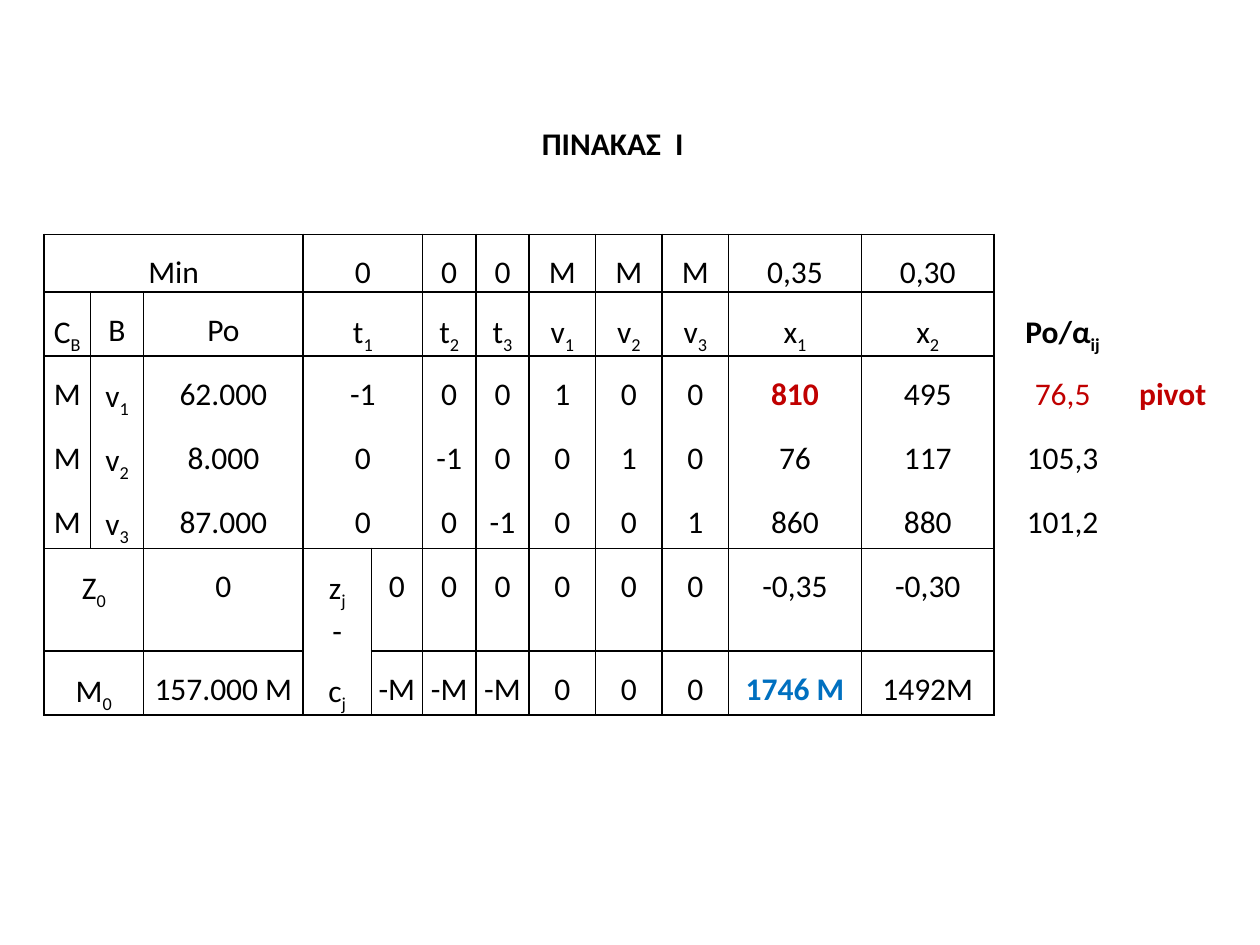
from typing import NamedTuple

from pptx import Presentation
from pptx.dml.color import RGBColor
from pptx.enum import text as t
from pptx.oxml import ns, xmlchemy as xc
from pptx.util import Pt

BLACK, RED, BLUE = "000000", "C00000", "0070C0"
GRID = 12  # columns inside the ruled part; the rest hold the ratios


class Row(NamedTuple):
    high: float
    text: str  # "|" parts cells, "<" joins the cell to its left, "_" lowers
    top: bool = True
    base: bool = True


class Style(NamedTuple):
    color: str = BLACK
    bold: bool = False


WIDTHS = [26.5, 30.4, 91.2, 38.9, 29.3, 30.5, 30.5, 38, 38, 38, 75.9, 75.9, 78.3, 47.5]
ROWS = [
    Row(16.5, "Min|<|<|0|<|0|0|M|M|M|0,35|0,30||"),
    Row(16.5, "C_B|B|Po|t_1|<|t_2|t_3|v_1|v_2|v_3|x_1|x_2|Po/α_ij|"),
    Row(16.5, "M|v_1|62.000|-1|<|0|0|1|0|0|810|495|76,5|pivot", base=False),
    Row(16.5, "M|v_2|8.000|0|<|-1|0|0|1|0|76|117|105,3|", top=False, base=False),
    Row(16.5, "M|v_3|87.000|0|<|0|-1|0|0|1|860|880|101,2|", top=False),
    Row(47.5, "Z_0|<|0|z_j\n-|0|0|0|0|0|0|-0,35|-0,30||"),
    Row(16.5, "M_0|<|157.000 M|c_j|-M|-M|-M|0|0|0|1746 M|1492M||"),
]
STYLES = {
    (1, 12): Style(bold=True),
    (2, 10): Style(RED, True),
    (2, 12): Style(RED),
    (2, 13): Style(RED, True),
    (6, 10): Style(BLUE, True),
}


def tint(color: str) -> RGBColor:
    return RGBColor.from_string(color)


def write(frame, words: str, *, size: float = 18, color: str = BLACK,
          bold: bool = False, align=t.PP_ALIGN.CENTER, lead: float = 1.5) -> None:
    """Fill a text frame; only the first line takes the wide spacing."""
    for i, line in enumerate(words.split("\n")):
        par = frame.add_paragraph() if i else frame.paragraphs[0]
        par.alignment = align
        par.line_spacing = 1.0 if i else lead
        for j, part in enumerate(line.split("_")):
            run = par.add_run()
            run.text = part
            font = run.font
            font.name, font.size, font.bold = "Calibri", Pt(size), bold
            font.color.rgb = tint(color)
            if j:
                run._r.get_or_add_rPr().set("baseline", "-25000")


def rule(cell, sides: str) -> None:
    """Draw the named sides of a cell and clear the others."""
    props = cell._tc.get_or_add_tcPr()
    for i, side in enumerate("LRTB"):
        line = xc.OxmlElement(f"a:ln{side}")
        line.set("w", str(Pt(1)))
        if side in sides:
            fill = line.makeelement(ns.qn("a:solidFill"))
            fill.append(fill.makeelement(ns.qn("a:srgbClr"), {"val": BLACK}))
        else:
            fill = line.makeelement(ns.qn("a:noFill"))
        line.append(fill)
        props.insert(i, line)


def edges(r: int, c: int) -> str:
    """Sides to draw: full grid, open rows in the body, open ratio columns."""
    if c >= GRID:
        return "L" if c == GRID else ""
    row = ROWS[r]
    top = row.top and (r, c) != (6, 3)
    base = row.base and (r, c) != (5, 3)
    return "LR" + "T" * top + "B" * base


def draw_table(slide) -> None:
    frame = slide.shapes.add_table(len(ROWS), len(WIDTHS), Pt(25.2), Pt(133.9),
                                   Pt(sum(WIDTHS)), Pt(248.4))
    table = frame.table
    table.first_row = table.horz_banding = False
    for col, wide in zip(table.columns, WIDTHS):
        col.width = Pt(wide)
    for r, row in enumerate(ROWS):
        table.rows[r].height = Pt(row.high)
        start = 0
        for c, words in enumerate(row.text.split("|")):
            cell = table.cell(r, c)
            cell.fill.background()
            cell.margin_left = cell.margin_right = Pt(3)
            cell.margin_top = cell.margin_bottom = 0
            rule(cell, edges(r, c))
            if words != "<":
                start = c
                if words:
                    style = STYLES.get((r, c), Style())
                    write(cell.text_frame, words, color=style.color, bold=style.bold)
        # Join each run of "<" cells to the cell before it
        cells = row.text.split("|")
        for start in range(len(cells) - 1):
            end = start
            while end + 1 < len(cells) and cells[end + 1] == "<":
                end += 1
            if end > start and cells[start] != "<":
                table.cell(r, start).merge(table.cell(r, end))
    frame.height = Pt(248.4)


def draw_title(slide) -> None:
    title = slide.shapes.title
    title.left, title.top, title.width, title.height = Pt(269.3), Pt(66.2), Pt(134.6), Pt(43.9)
    frame = title.text_frame
    frame.word_wrap = False
    frame.auto_size = t.MSO_AUTO_SIZE.NONE
    frame.vertical_anchor = t.MSO_ANCHOR.TOP
    frame.margin_left, frame.margin_top = Pt(40.3), Pt(4.7)
    write(frame, "ΠΙΝΑΚΑΣ  Ι", bold=True, align=t.PP_ALIGN.LEFT, lead=1.0)


def main() -> None:
    deck = Presentation()
    deck.slide_width, deck.slide_height = Pt(720), Pt(540)
    slide = deck.slides.add_slide(deck.slide_layouts[5])
    draw_table(slide)
    draw_title(slide)
    deck.save("out.pptx")


if __name__ == "__main__":
    main()
